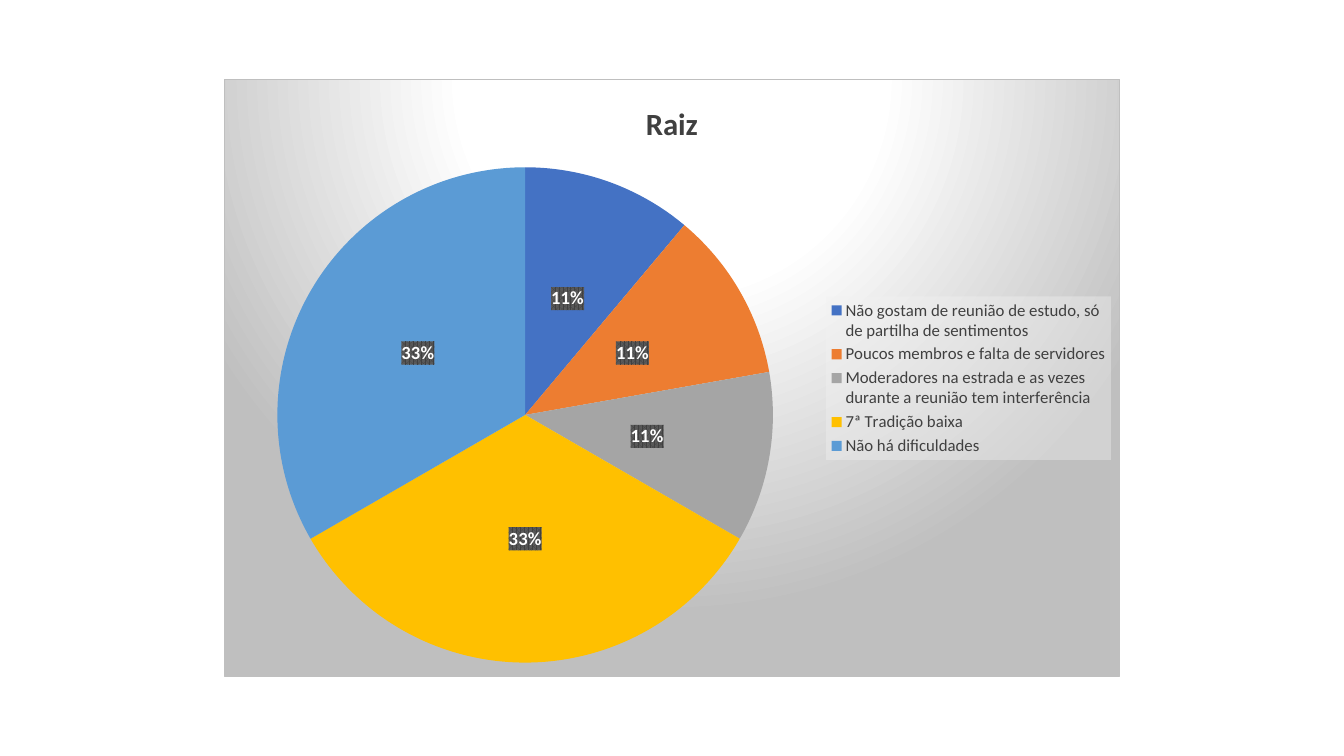
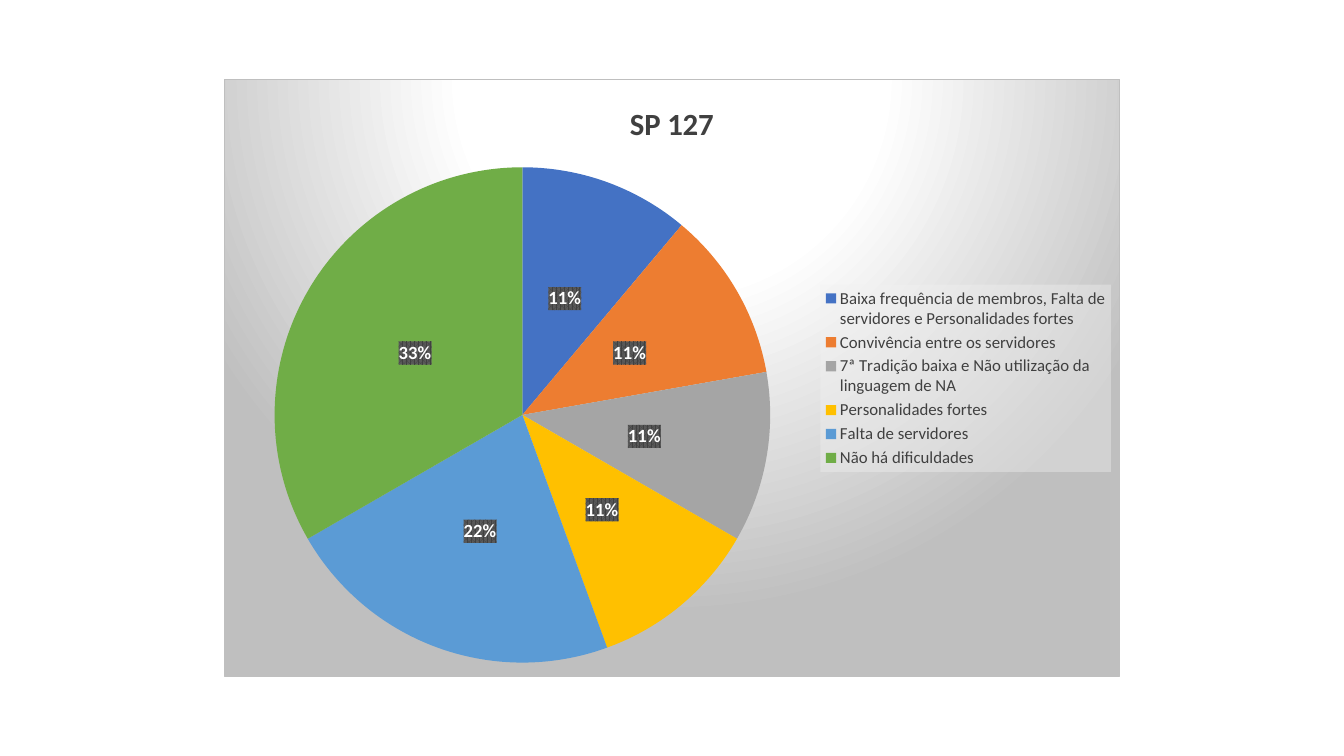
from lxml.etree import SubElement
from pptx import Presentation
from pptx.chart.data import CategoryChartData
from pptx.dml.color import RGBColor
from pptx.enum.chart import XL_CHART_TYPE, XL_LABEL_POSITION, XL_LEGEND_POSITION
from pptx.oxml import parse_xml
from pptx.oxml.ns import qn
from pptx.util import Cm, Pt

# Shared looks
HUES = ["4472C4", "ED7D31", "A5A5A5", "FFC000", "5B9BD5", "70AD47"]
FONTS = {
    "base": {"size": Pt(10), "color": "000000"},
    "title": {"size": Pt(22), "color": "404040", "bold": True},
    "legend": {"size": Pt(12), "color": "404040", "bold": False},
    "label": {"size": Pt(13.3), "color": "FFFFFF", "bold": True},
}
SPACE = ('xmlns:c="http://schemas.openxmlformats.org/drawingml/2006/chart" '
         'xmlns:a="http://schemas.openxmlformats.org/drawingml/2006/main"')

# Backgrounds of the chart, its legend and its labels
FILLS = {
    "/c:chartSpace/c:txPr": """<a:gradFill><a:gsLst>
        <a:gs pos="0"><a:srgbClr val="FFFFFF"/></a:gs>
        <a:gs pos="39000"><a:srgbClr val="FFFFFF"/></a:gs>
        <a:gs pos="100000"><a:srgbClr val="BFBFBF"/></a:gs></a:gsLst>
        <a:path path="circle">
        <a:fillToRect l="50000" t="-80000" r="50000" b="180000"/></a:path>
        </a:gradFill><a:ln w="9525"><a:solidFill>
        <a:srgbClr val="BFBFBF"/></a:solidFill></a:ln>""",
    "//c:legend/c:txPr": """<a:solidFill><a:srgbClr val="F2F2F2">
        <a:alpha val="39000"/></a:srgbClr></a:solidFill>""",
    "//c:dLbls/c:txPr": """<a:pattFill prst="pct75">
        <a:fgClr><a:srgbClr val="404040"/></a:fgClr>
        <a:bgClr><a:srgbClr val="595959"/></a:bgClr></a:pattFill>""",
}

# Title and shares of each slide
PIES = [
    ("Raiz", {
        "Não gostam de reunião de estudo, só de partilha de sentimentos": 11,
        "Poucos membros e falta de servidores": 11,
        "Moderadores na estrada e as vezes durante a reunião tem interferência": 11,
        "7ª Tradição baixa": 33,
        "Não há dificuldades": 33,
    }),
    ("SP 127", {
        "Baixa frequência de membros, Falta de servidores e Personalidades fortes": 11,
        "Convivência entre os servidores": 11,
        "7ª Tradição baixa e Não utilização da linguagem de NA": 11,
        "Personalidades fortes": 11,
        "Falta de servidores": 22,
        "Não há dificuldades": 33,
    }),
]


def paint(part, hue):
    part.rgb = RGBColor.from_string(hue)


def style(font, kind):
    font.name = "Calibri"
    for key, value in FONTS[kind].items():
        if key == "color":
            paint(font.color, value)
        else:
            setattr(font, key, value)


deck = Presentation()
deck.slide_width, deck.slide_height = Cm(33.87), Cm(19.05)

for name, shares in PIES:
    slide = deck.slides.add_slide(deck.slide_layouts[6])

    # Pie
    data = CategoryChartData()
    data.categories = list(shares)
    data.add_series(name, list(shares.values()))
    chart = slide.shapes.add_chart(XL_CHART_TYPE.PIE, Cm(5.64), Cm(2),
                                   Cm(22.58), Cm(15.06), data).chart
    style(chart.font, "base")
    plot = chart.plots[0]
    plot.vary_by_categories = True
    for i, hue in enumerate(HUES[:len(shares)]):
        fill = plot.series[0].points[i].format.fill
        fill.solid()
        paint(fill.fore_color, hue)

    # Title
    chart.has_title = True
    frame = chart.chart_title.text_frame
    frame.text = name
    style(frame.paragraphs[0].runs[0].font, "title")
    chart.chart_title.include_in_layout = False

    # Legend
    chart.has_legend = True
    chart.legend.position = XL_LEGEND_POSITION.RIGHT
    chart.legend.include_in_layout = False
    style(chart.legend.font, "legend")

    # Labels
    labels = plot.series[0].data_labels
    format = {"show_percentage": True, "show_value": False,
              "number_format": "0%", "number_format_is_linked": False,
              "position": XL_LABEL_POSITION.CENTER}
    for key, value in format.items():
        setattr(labels, key, value)
    style(labels.font, "label")

    # Fills and square corners
    root = chart.element
    for place, fill in FILLS.items():
        for text in root.xpath(place):
            text.addprevious(parse_xml(f"<c:spPr {SPACE}>{fill}</c:spPr>"))
    corner = SubElement(root, qn("c:roundedCorners"), val="0")
    root.xpath("c:chart")[0].addprevious(corner)

deck.save("out.pptx")
